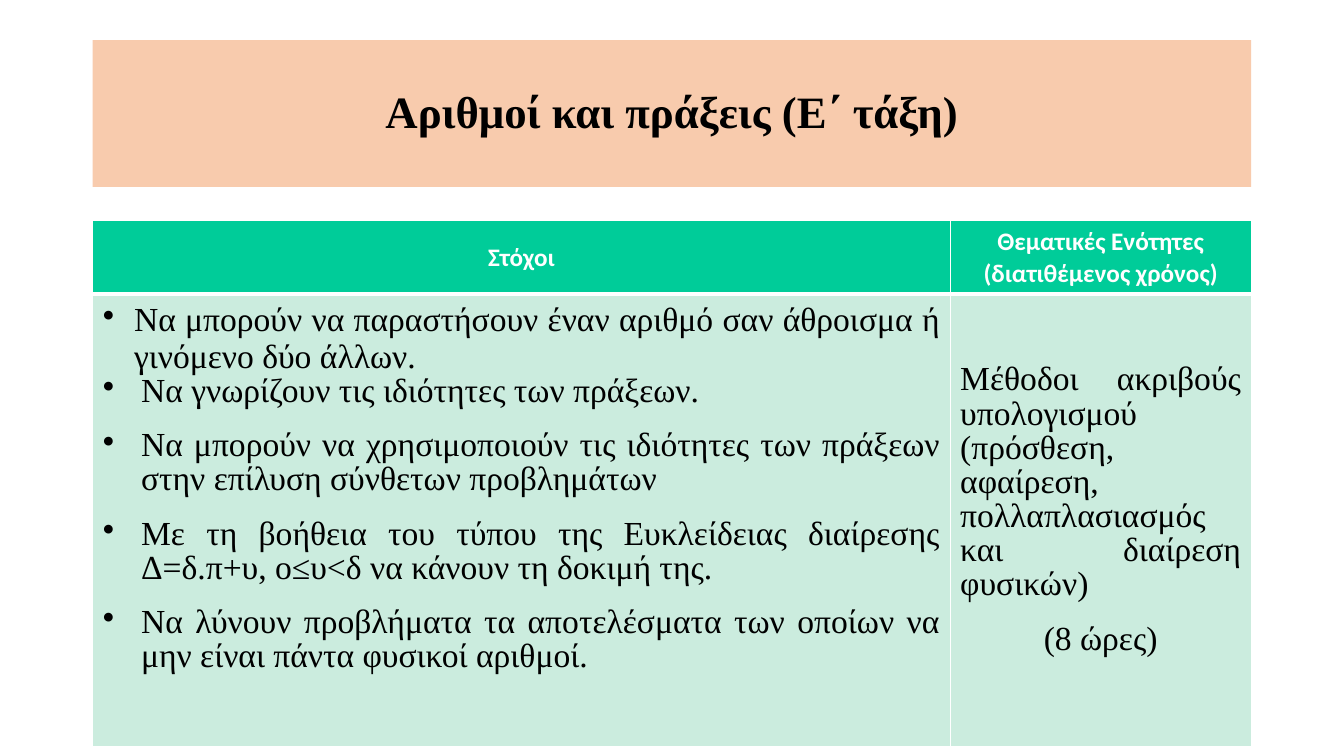
from lxml import etree
from pptx import Presentation
from pptx.dml.color import RGBColor
from pptx.enum.shapes import MSO_SHAPE
from pptx.enum.text import MSO_ANCHOR, PP_ALIGN
from pptx.oxml.ns import qn
from pptx.util import Inches, Pt

RECTANGLE = MSO_SHAPE.RECTANGLE
MIDDLE, TOP = MSO_ANCHOR.MIDDLE, MSO_ANCHOR.TOP
CENTER, JUSTIFY = PP_ALIGN.CENTER, PP_ALIGN.JUSTIFY

COLORS = {"peach": "F8CBAD", "green": "00CC99", "mint": "CBECDE",
          "black": "000000", "white": "FFFFFF"}
TITLE_FONT = {"name": "Times New Roman", "size": Pt(32), "bold": True}
HEADER_FONT = {"name": "Calibri", "size": Pt(18), "bold": True}
BODY_FONT = {"name": "Times New Roman", "size": Pt(24), "bold": False}
HEADER_LINES = {"alignment": CENTER, "line_spacing": 1.04}
BODY_LINES = {"alignment": JUSTIFY, "line_spacing": 0.92, "space_after": Pt(14.2)}
THIN, THICK = 0.91, 2.95


def apply(target, values):
    for name, value in values.items():
        setattr(target, name, value)


class Page:
    """One slide on a grid of 100 columns by 100 rows."""

    def __init__(self, prs):
        self.column = prs.slide_width / 100
        self.row = prs.slide_height / 100
        self.slide = prs.slides.add_slide(prs.slide_layouts[6])

    def area(self, left, top, width, height):
        return (round(left * self.column), round(top * self.row),
                round(width * self.column), round(height * self.row))

    def fill(self, target, color):
        target.fill.solid()
        target.fill.fore_color.rgb = RGBColor.from_string(COLORS[color])

    def add_lines(self, frame, lines, font, color):
        """Fill a text frame from (text, paragraph format, bullet indent) items."""
        for number, (text, layout, indent) in enumerate(lines):
            paragraph = frame.add_paragraph() if number else frame.paragraphs[0]
            apply(paragraph, layout)
            run = paragraph.add_run()
            run.text = text
            apply(run.font, font)
            run.font.color.rgb = RGBColor.from_string(COLORS[color])
            if indent:
                properties = paragraph._p.get_or_add_pPr()
                properties.set("marL", str(Inches(indent)))
                properties.set("indent", str(-Inches(indent)))
                etree.SubElement(properties, qn("a:buChar"), char="•")

    def banner(self, area, text, color):
        shape = self.slide.shapes.add_shape(RECTANGLE, *self.area(*area))
        shape.shadow.inherit = False
        shape.line.fill.background()
        self.fill(shape, color)
        apply(shape.text_frame, {"vertical_anchor": MIDDLE, "word_wrap": True})
        layout = {"alignment": CENTER, "line_spacing": 0.9}
        self.add_lines(shape.text_frame, [(text, layout, 0)], TITLE_FONT, "black")

    def table(self, left, top, widths, heights):
        area = self.area(left, top, sum(widths), sum(heights))
        table = self.slide.shapes.add_table(len(heights), len(widths), *area).table
        apply(table, {"first_row": False, "horz_banding": False})
        for column, width in zip(table.columns, widths):
            column.width = round(width * self.column)
        for row, height in zip(table.rows, heights):
            row.height = round(height * self.row)
        return table

    def borders(self, cell, widths):
        properties = cell._tc.get_or_add_tcPr()
        for position, (side, width) in enumerate(widths.items()):
            line = etree.Element(qn(f"a:ln{side}"), w=str(Pt(width)))
            solid = etree.SubElement(line, qn("a:solidFill"))
            etree.SubElement(solid, qn("a:srgbClr"), val=COLORS["white"])
            properties.insert(position, line)

    def cell(self, cell, lines, font, colors, anchor, top_margin, widths):
        fill, ink = colors
        apply(cell, {"vertical_anchor": anchor, "margin_top": Inches(top_margin)})
        self.fill(cell, fill)
        self.borders(cell, widths)
        self.add_lines(cell.text_frame, lines, font, ink)


def main():
    prs = Presentation()
    prs.slide_width, prs.slide_height = Inches(13.34), Inches(7.5)
    page = Page(prs)

    # Title
    page.banner((6.9, 5.33, 86.2, 19.4), "Αριθμοί και πράξεις (Ε΄ τάξη)", "peach")

    # Goals and topics
    plan = page.table(6.9, 29.1, [63.8, 22.4], [9.47, 59.87])
    headers = [["Στόχοι"], ["Θεματικές Ενότητες", "(διατιθέμενος χρόνος)"]]
    for column, header in enumerate(headers):
        page.cell(plan.cell(0, column), [(text, HEADER_LINES, 0) for text in header],
                  HEADER_FONT, ("green", "white"), MIDDLE, 0.05,
                  {"L": THIN, "R": THIN, "T": THIN, "B": THICK})

    first_goal = "Να μπορούν να παραστήσουν έναν αριθμό σαν άθροισμα ή γινόμενο δύο άλλων."
    other_goals = [
        "Να γνωρίζουν τις ιδιότητες των πράξεων.",
        "Να μπορούν να χρησιμοποιούν τις ιδιότητες των πράξεων στην επίλυση "
        "σύνθετων προβλημάτων",
        "Με τη βοήθεια του τύπου της Ευκλείδειας διαίρεσης Δ=δ.π+υ, ο≤υ<δ "
        "να κάνουν τη δοκιμή της.",
        "Να λύνουν προβλήματα τα αποτελέσματα των οποίων να μην είναι πάντα "
        "φυσικοί αριθμοί.",
    ]
    goals = [(first_goal, {"alignment": JUSTIFY}, 0.31)]
    goals += [(goal, BODY_LINES, 0.38) for goal in other_goals]
    topics = [
        ("Μέθοδοι ακριβούς υπολογισμού (πρόσθεση, αφαίρεση, πολλαπλασιασμός "
         "και διαίρεση φυσικών)", BODY_LINES, 0),
        ("(8 ώρες)", {**BODY_LINES, "alignment": CENTER}, 0),
    ]
    for column, (lines, top_margin) in enumerate([(goals, 0.07), (topics, 0.69)]):
        page.cell(plan.cell(1, column), lines, BODY_FONT, ("mint", "black"), TOP,
                  top_margin, {"L": THIN, "R": THIN, "T": THICK, "B": THIN})

    prs.save("out.pptx")


if __name__ == "__main__":
    main()
